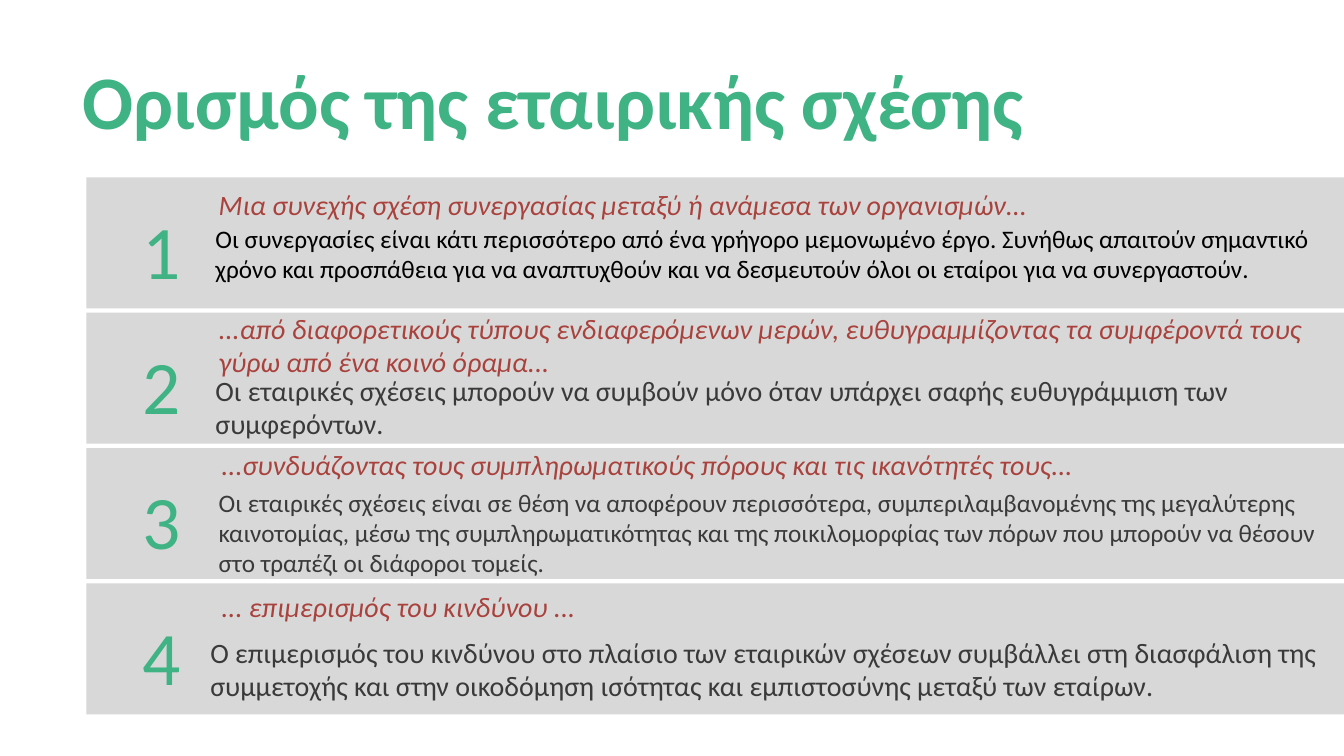
from dataclasses import dataclass

from pptx import Presentation
from pptx.dml.color import RGBColor
from pptx.enum.shapes import MSO_SHAPE
from pptx.enum.text import MSO_ANCHOR as Anchor, MSO_AUTO_SIZE as AutoSize, PP_ALIGN as Align
from pptx.util import Cm, Pt

COLOURS = {
    "green": "40B385",
    "red": "A9423D",
    "band": "D8D8D8",
    "dark": "3A3A3A",
    "black": "000000",
}
FONT = "Calibri"
SLIDE_WIDTH, SLIDE_HEIGHT = 33.87, 19.05
BAND_LEFT, BAND_TOP, BAND_HEIGHT, BAND_PITCH = 2.18, 4.47, 3.3, 3.41


@dataclass
class Point:
    """One numbered part of the definition, with box places in centimetres."""

    phrase: str
    phrase_box: tuple
    detail: str
    detail_box: tuple
    detail_size: int
    detail_colour: str = "dark"


POINTS = [
    Point(
        "Μια συνεχής σχέση συνεργασίας μεταξύ ή ανάμεσα των οργανισμών...",
        (5.26, 4.83, 22.43, 0.66),
        "Οι συνεργασίες είναι κάτι περισσότερο από ένα γρήγορο μεμονωμένο έργο. "
        "Συνήθως απαιτούν σημαντικό χρόνο και προσπάθεια για να αναπτυχθούν και "
        "να δεσμευτούν όλοι οι εταίροι για να συνεργαστούν.",
        (5.18, 5.49, 28.69, 2.18), 18, "black",
    ),
    Point(
        "...από διαφορετικούς τύπους ενδιαφερόμενων μερών, ευθυγραμμίζοντας "
        "τα συμφέροντά τους γύρω από ένα κοινό όραμα...",
        (5.26, 8.26, 28.12, 0.86),
        "Οι εταιρικές σχέσεις μπορούν να συμβούν μόνο όταν υπάρχει σαφής "
        "ευθυγράμμιση των συμφερόντων.",
        (5.18, 9.27, 26.82, 1.83), 20,
    ),
    Point(
        "...συνδυάζοντας τους συμπληρωματικούς πόρους και τις ικανότητές τους...",
        (5.33, 11.33, 25.91, 0.76),
        "Οι εταιρικές σχέσεις είναι σε θέση να αποφέρουν περισσότερα, "
        "συμπεριλαμβανομένης της μεγαλύτερης καινοτομίας, μέσω της "
        "συμπληρωματικότητας και της ποικιλομορφίας των πόρων που μπορούν να "
        "θέσουν στο τραπέζι οι διάφοροι τομείς.",
        (5.26, 12.14, 28.6, 2.11), 18,
    ),
    Point(
        "... επιμερισμός του κινδύνου ...",
        (5.33, 14.88, 18.21, 0.81),
        "Ο επιμερισμός του κινδύνου στο πλαίσιο των εταιρικών σχέσεων συμβάλλει "
        "στη διασφάλιση της συμμετοχής και στην οικοδόμηση ισότητας και "
        "εμπιστοσύνης μεταξύ των εταίρων.",
        (5.05, 15.88, 28.52, 1.68), 20,
    ),
]


def write(frame, text, size, colour, anchor=Anchor.TOP, align=Align.LEFT,
          inset=(0.25, 0.13), bold=False, italic=False):
    """Fill a text frame with one formatted run and return its paragraph."""
    frame.word_wrap = True
    frame.auto_size = AutoSize.NONE
    frame.vertical_anchor = anchor
    frame.margin_left = frame.margin_right = Cm(inset[0])
    frame.margin_top = frame.margin_bottom = Cm(inset[1])
    paragraph = frame.paragraphs[0]
    paragraph.alignment = align
    run = paragraph.add_run()
    run.text = text
    run.font.name = FONT
    run.font.size = Pt(size)
    run.font.bold = bold
    run.font.italic = italic
    run.font.color.rgb = RGBColor.from_string(COLOURS[colour])
    return paragraph


def add_title(slide, text):
    """Move the title placeholder into place and write the heading."""
    title = slide.shapes.title
    title.left, title.top, title.width, title.height = Cm(1.83), Cm(1.4), Cm(29.92), Cm(2.54)
    heading = write(title.text_frame, text, 54, "green", Anchor.MIDDLE, bold=True)
    heading.line_spacing = 0.85


def add_text(slide, box, text, size, colour, **style):
    """Add a text box at a place given in centimetres."""
    frame = slide.shapes.add_textbox(*map(Cm, box)).text_frame
    write(frame, text, size, colour, **style)


def add_band(slide, top):
    """Add a grey band that runs to the right edge of the slide."""
    band = slide.shapes.add_shape(
        MSO_SHAPE.RECTANGLE, Cm(BAND_LEFT), Cm(top),
        Cm(SLIDE_WIDTH - BAND_LEFT), Cm(BAND_HEIGHT))
    band.shadow.inherit = False
    band.fill.solid()
    band.fill.fore_color.rgb = RGBColor.from_string(COLOURS["band"])
    band.line.fill.background()


def add_point(slide, number, point):
    """Add a band with its number, phrase and explanation."""
    top = BAND_TOP + (number - 1) * BAND_PITCH
    add_band(slide, top)
    add_text(slide, point.detail_box, point.detail, point.detail_size, point.detail_colour)
    add_text(slide, point.phrase_box, point.phrase, 20, "red",
             anchor=Anchor.MIDDLE, italic=True)
    add_text(slide, (2.95, top + 0.16, 2.23, 2.97), str(number), 54, "green",
             anchor=Anchor.BOTTOM, align=Align.CENTER, inset=(0.33, 0.18))


def main():
    """Build the slide and save it."""
    deck = Presentation()
    deck.slide_width, deck.slide_height = Cm(SLIDE_WIDTH), Cm(SLIDE_HEIGHT)
    slide = deck.slides.add_slide(deck.slide_layouts.get_by_name("Title Only"))
    add_title(slide, "Ορισμός της εταιρικής σχέσης")
    for number, point in enumerate(POINTS, start=1):
        add_point(slide, number, point)
    deck.save("out.pptx")


if __name__ == "__main__":
    main()
